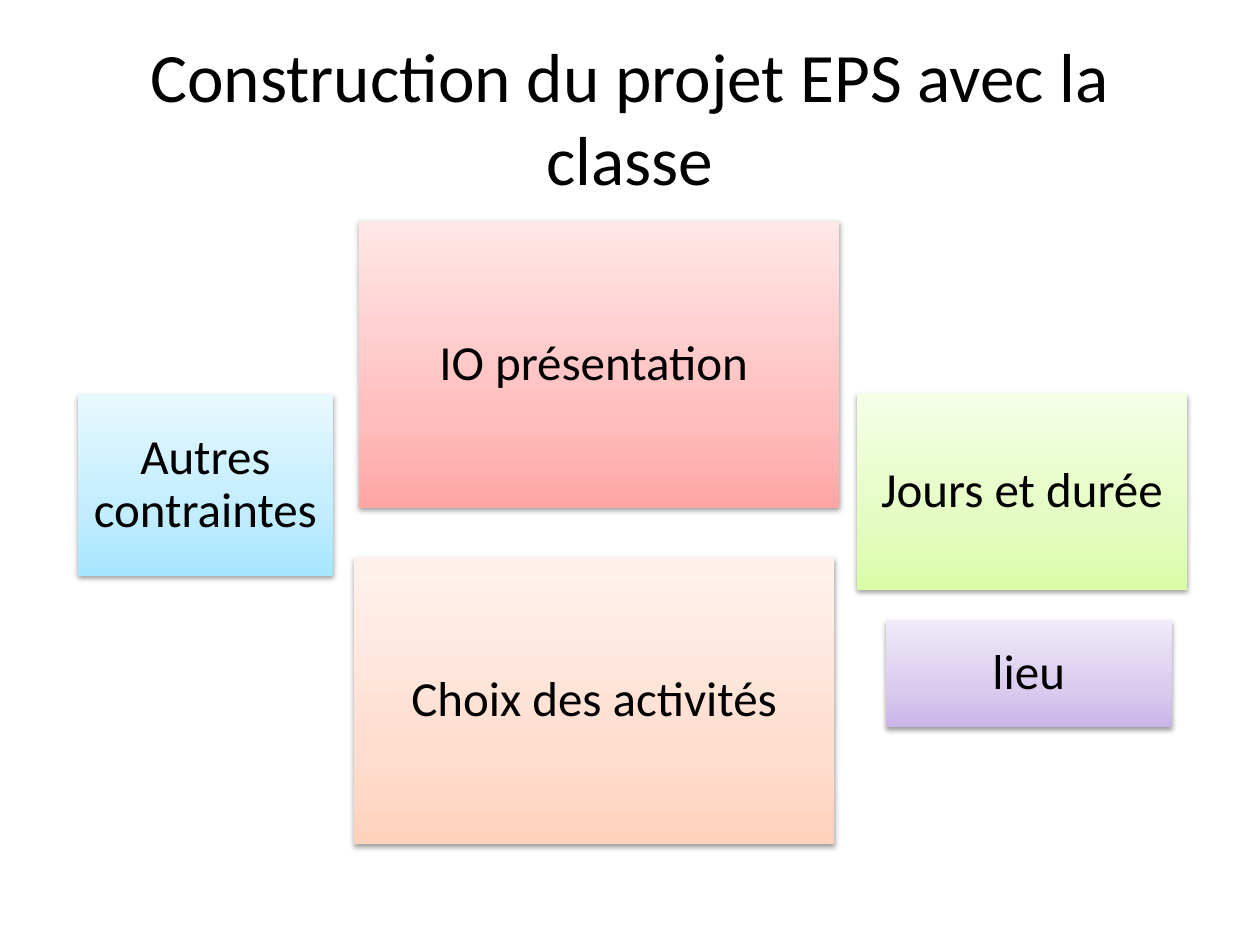
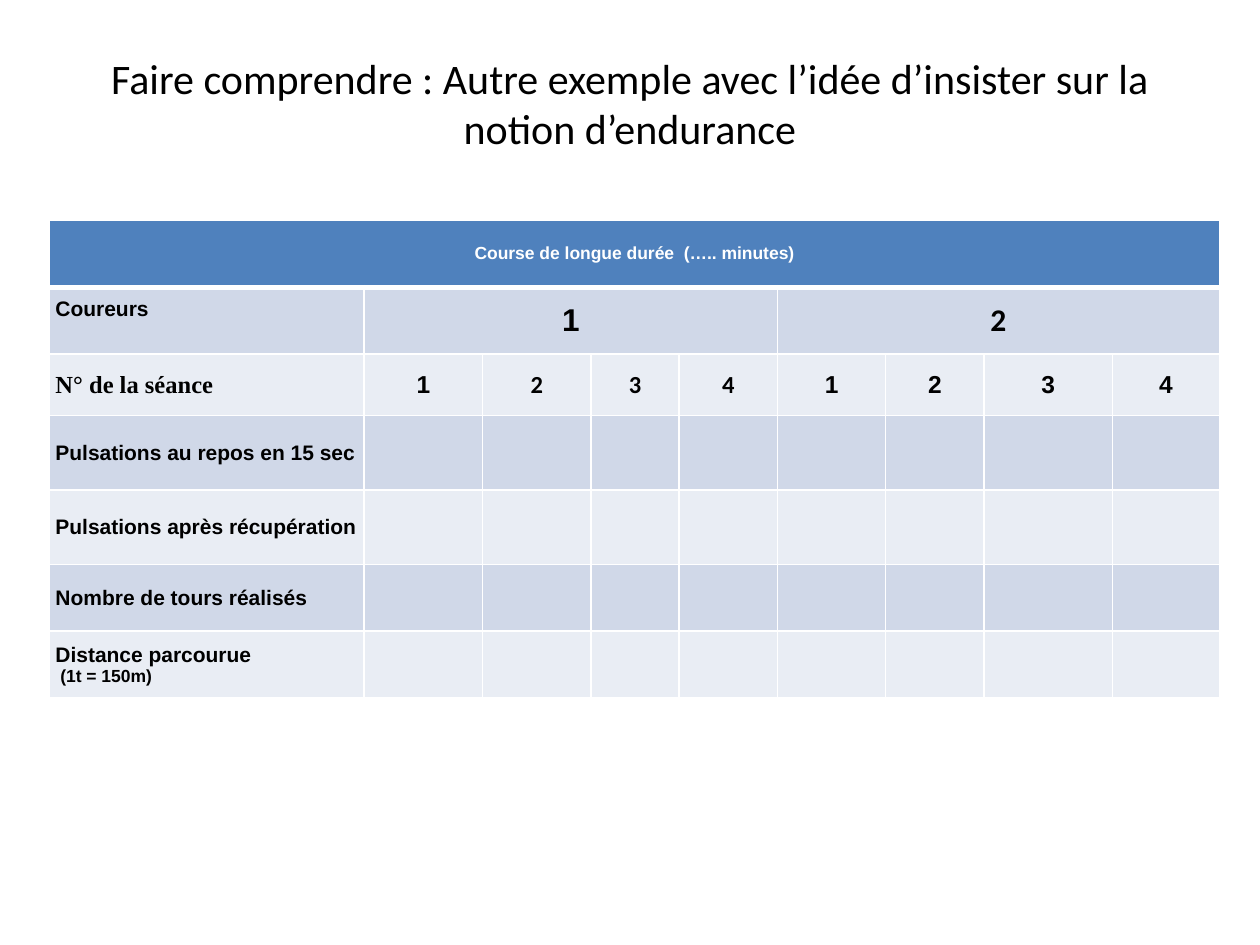
from typing import NamedTuple

from pptx import Presentation
from pptx.dml.color import RGBColor
from pptx.enum.shapes import MSO_SHAPE
from pptx.enum.text import MSO_ANCHOR, MSO_AUTO_SIZE, PP_ALIGN
from pptx.oxml import parse_xml
from pptx.oxml.ns import nsdecls
from pptx.util import Emu, Pt

PX = 9144  # EMU per px, 100 px to the inch
COLORS = {
    "ink": "000000", "paper": "FFFFFF", "head": "4F81BD",
    "dark": "D0D8E8", "light": "E9EDF4",
}
# Gradient stops from bottom to top
GRADS = {
    "red": ("FFA6A5", "FFC0BF", "FFE7E7"),
    "green": ("DAFDA7", "E4FCC2", "F5FFE7"),
    "purple": ("C9B5E8", "D8CBEE", "F0EAF9"),
    "blue": ("A7E6FF", "C1EDFF", "E7F8FF"),
    "orange": ("FFD2BD", "FFDED0", "FFF2ED"),
}
STOPS = (0, 35, 100)
SANS, BODY, SERIF = "Arial", "Calibri", "Times New Roman"


class Card(NamedTuple):
    text: str
    grad: str
    left: int
    top: int
    width: int
    height: int


class Entry(NamedTuple):
    row: int
    col: int
    text: str
    size: int = 12
    font: str = SANS
    span: int = 1


CARDS = [
    Card("IO présentation ", "red", 285, 175, 381, 228),
    Card("Jours et durée", "green", 680, 312, 262, 156),
    Card("lieu", "purple", 703, 492, 227, 85),
    Card("Autres contraintes", "blue", 62, 313, 202, 144),
    Card("Choix des activités", "orange", 281, 442, 381, 228),
]

COLS = (250, 94, 86, 70, 78, 86, 78, 102, 85)
ROWS = (53, 53, 49, 59, 59, 53, 53)
RUNNERS = 2
TURNS = 4
LABELS = ("Pulsations au repos en 15 sec", "Pulsations après récupération",
          "Nombre de tours réalisés", "Distance parcourue\n (1t = 150m)")


def px(value: int) -> Emu:
    return Emu(value * PX)


def put(target, values: dict) -> None:
    for name, value in values.items():
        setattr(target, name, value)


def style(para, size: float, font: str, color: str = "ink",
          bold: bool = False) -> None:
    put(para.font, {"size": Pt(size), "name": font, "bold": bold})
    para.font.color.rgb = RGBColor.from_string(COLORS[color])


def add_slide(deck, title: str, size: float, height: int):
    slide = deck.slides.add_slide(deck.slide_layouts[5])
    head = slide.shapes.title
    put(head, {"left": px(50), "top": px(30),
               "width": px(900), "height": px(height)})
    frame = head.text_frame
    frame.text = title
    put(frame, {"word_wrap": True, "auto_size": MSO_AUTO_SIZE.NONE,
                "vertical_anchor": MSO_ANCHOR.MIDDLE})
    para = frame.paragraphs[0]
    para.alignment = PP_ALIGN.CENTER
    style(para, size, BODY)
    return slide


def add_card(slide, card: Card) -> None:
    box = slide.shapes.add_shape(MSO_SHAPE.RECTANGLE, *map(px, card[2:]))
    # Gradient fill and soft shadow
    stops = "".join(
        f'<a:gs pos="{pos * 1000}"><a:srgbClr val="{color}"/></a:gs>'
        for pos, color in zip(STOPS, GRADS[card.grad]))
    props = box._element.spPr
    props.insert(2, parse_xml(
        f'<a:gradFill {nsdecls("a")} rotWithShape="1"><a:gsLst>{stops}</a:gsLst>'
        '<a:lin ang="16200000" scaled="0"/></a:gradFill>'))
    box.line.fill.background()
    props.append(parse_xml(
        f'<a:effectLst {nsdecls("a")}><a:outerShdw blurRad="40000" dist="20000" '
        f'dir="5400000" rotWithShape="0"><a:srgbClr val="{COLORS["ink"]}">'
        '<a:alpha val="38000"/></a:srgbClr></a:outerShdw></a:effectLst>'))
    # Label
    frame = box.text_frame
    sides = ("left", "top", "right", "bottom")
    put(frame, {f"margin_{side}": px(12) for side in sides})
    put(frame, {"word_wrap": True, "vertical_anchor": MSO_ANCHOR.MIDDLE})
    frame.text = card.text
    para = frame.paragraphs[0]
    put(para, {"alignment": PP_ALIGN.CENTER, "line_spacing": 0.9})
    style(para, 28, BODY)


def paint(cell, row: int) -> None:
    tone = "head" if row == 0 else ("light", "dark")[row % 2]
    cell.fill.solid()
    cell.fill.fore_color.rgb = RGBColor.from_string(COLORS[tone])
    put(cell, {"margin_left": px(5), "margin_right": px(5), "margin_top": 0,
               "margin_bottom": 0, "vertical_anchor": MSO_ANCHOR.MIDDLE})
    # White rules, thicker under the heading
    thick = {(0, "B"), (1, "T")}
    for place, side in enumerate("LRTB"):
        width = Pt(3 if (row, side) in thick else 1)
        cell._tc.get_or_add_tcPr().insert(place, parse_xml(
            f'<a:ln{side} {nsdecls("a")} w="{width}"><a:solidFill>'
            f'<a:srgbClr val="{COLORS["paper"]}"/></a:solidFill></a:ln{side}>'))


def list_cells() -> list[Entry]:
    cells = [
        Entry(0, 0, "Course de longue durée  (….. minutes)", 10, span=len(COLS)),
        Entry(1, 0, "Coureurs"),
        Entry(2, 0, "N° de la séance", 14, SERIF),
    ]
    for who in range(RUNNERS):
        start = 1 + who * TURNS
        cells.append(Entry(1, start, str(who + 1), 18, (SANS, BODY)[who], TURNS))
        for turn in range(TURNS):
            font = BODY if who == 0 and turn else SANS
            cells.append(Entry(2, start + turn, str(turn + 1), 14, font))
    return cells + [Entry(row, 0, text) for row, text in enumerate(LABELS, 3)]


def add_grid(slide) -> None:
    grid = slide.shapes.add_table(
        len(ROWS), len(COLS), px(39), px(175), px(sum(COLS)), px(sum(ROWS))).table
    for col, width in zip(grid.columns, COLS):
        col.width = px(width)
    for index, (row, height) in enumerate(zip(grid.rows, ROWS)):
        row.height = px(height)
        for cell in row.cells:
            paint(cell, index)
    # Words
    for item in list_cells():
        cell = grid.cell(item.row, item.col)
        if item.span > 1:
            cell.merge(grid.cell(item.row, item.col + item.span - 1))
        cell.text = item.text
        center = item.row == 0 or item.col > 0
        for index, para in enumerate(cell.text_frame.paragraphs):
            para.alignment = PP_ALIGN.CENTER if center else PP_ALIGN.LEFT
            style(para, 10 if index else item.size, item.font,
                  "ink" if item.row else "paper", True)
    grid.cell(1, 0).margin_bottom = px(19)  # lifts the runners label


def main() -> None:
    deck = Presentation()
    put(deck, {"slide_width": px(1000), "slide_height": px(750)})

    # Project map
    slide = add_slide(deck, "Construction du projet EPS avec la classe", 39.6, 125)
    for card in CARDS:
        add_card(slide, card)

    # Endurance table
    slide = add_slide(deck, "Faire comprendre : Autre exemple avec l’idée "
                            "d’insister sur la notion d’endurance", 24, 103)
    add_grid(slide)
    deck.save("out.pptx")


if __name__ == "__main__":
    main()
